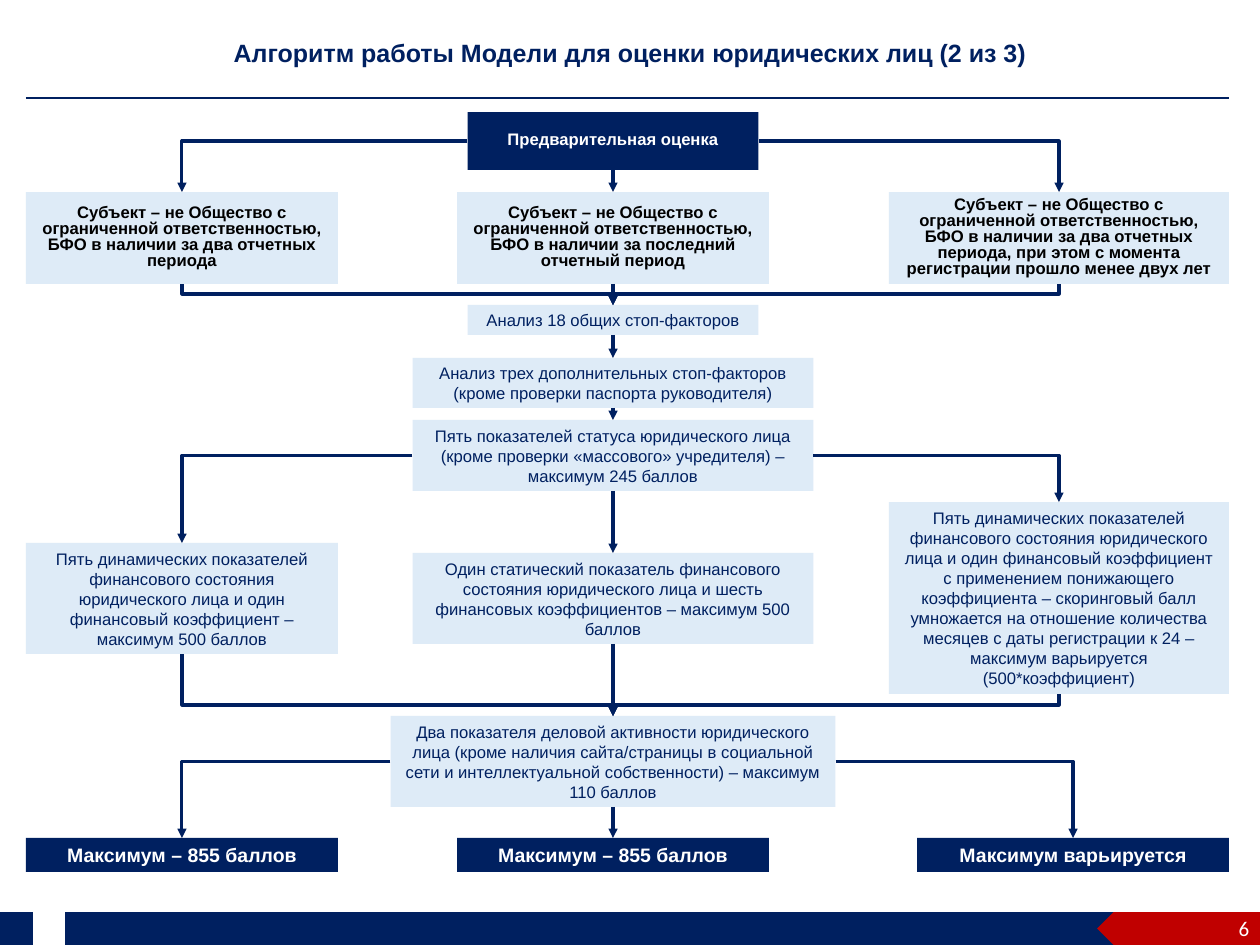
from pptx import Presentation
from pptx import util as u
from pptx.dml.color import RGBColor
from pptx.enum import shapes, text
from pptx.oxml import parse_xml
from pptx.oxml.ns import nsdecls
from lxml import etree

THEME = {
    "navy": "002060", "pale": "DEEBF7", "red": "C00000",
    "white": "FFFFFF", "black": "000000",
    "font": "Arial", "num_font": "Calibri",
    "title": 18, "body": 12, "score": 14, "num": 15.1,
    "flow": 2.25, "rule": 1.75,
}
TITLE = "Алгоритм работы Модели для оценки юридических лиц (2 из 3)"
PAGE = "6"

STYLES = {
    "start": ("navy", "white", "body", True, 0.8),
    "case": ("pale", "black", "body", True, 0.8),
    "step": ("pale", "navy", "body", False, None),
    "score": ("navy", "white", "score", True, None),
}
LEFT, MID, RIGHT, LAST = 1.82, 6.13, 10.59, 10.73

BOXES = {
    "start": ("start", MID, 1.12, 2.91, 0.58, "Предварительная оценка"),
    "case_l": ("case", LEFT, 1.92, 3.12, 0.92,
               "Субъект – не Общество с ограниченной ответственностью, "
               "БФО в наличии за два отчетных периода"),
    "case_m": ("case", MID, 1.92, 3.12, 0.92,
               "Субъект – не Общество с ограниченной ответственностью, "
               "БФО в наличии за последний отчетный период"),
    "case_r": ("case", RIGHT, 1.92, 3.4, 0.92,
               "Субъект – не Общество с ограниченной ответственностью, "
               "БФО в наличии за два отчетных периода, при этом с момента "
               "регистрации прошло менее двух лет"),
    "stops": ("step", MID, 3.05, 2.91, 0.3, "Анализ 18 общих стоп-факторов"),
    "extra": ("step", MID, 3.58, 4.01, 0.5,
              "Анализ трех дополнительных стоп-факторов "
              "(кроме проверки паспорта руководителя)"),
    "status": ("step", MID, 4.2, 4.01, 0.71,
               "Пять показателей статуса юридического лица (кроме проверки "
               "«массового» учредителя) – максимум 245 баллов"),
    "fin_l": ("step", LEFT, 5.43, 3.12, 1.11,
              "Пять динамических показателей финансового состояния "
              "юридического лица и один финансовый коэффициент – "
              "максимум 500 баллов"),
    "fin_m": ("step", MID, 5.53, 4.01, 0.91,
              "Один статический показатель финансового состояния "
              "юридического лица и шесть финансовых коэффициентов – "
              "максимум 500 баллов"),
    "fin_r": ("step", RIGHT, 5.02, 3.4, 1.92,
              "Пять динамических показателей финансового состояния "
              "юридического лица и один финансовый коэффициент с применением "
              "понижающего коэффициента – скоринговый балл умножается на "
              "отношение количества месяцев с даты регистрации к 24 – "
              "максимум варьируется (500*коэффициент)"),
    "trade": ("step", MID, 7.16, 4.45, 0.91,
              "Два показателя деловой активности юридического лица (кроме "
              "наличия сайта/страницы в социальной сети и интеллектуальной "
              "собственности) – максимум 110 баллов"),
    "max_l": ("score", LEFT, 8.38, 3.12, 0.34, "Максимум – 855 баллов"),
    "max_m": ("score", MID, 8.38, 3.12, 0.34, "Максимум – 855 баллов"),
    "max_r": ("score", LAST, 8.38, 3.12, 0.34, "Максимум варьируется"),
}
DOWN = [("start", "case_m"), ("case_m", "stops"), ("stops", "extra"),
        ("extra", "status"), ("status", "fin_m"), ("fin_m", "trade"),
        ("trade", "max_m")]
SPLIT = [("start", "case"), ("status", "fin"), ("trade", "max")]
JOIN = [("case", "stops"), ("fin", "trade")]
BUS = 0.11
TOP, WEST, BASE, EAST = range(4)

FOOTER = [
    ("RECTANGLE", 0, 0.33, "navy"),
    ("RECTANGLE", 0.65, 10.82, "navy"),
    ("PENTAGON", 10.97, 1.63, "red"),
]

deck = Presentation()
deck.slide_width, deck.slide_height = u.Inches(12.6), u.Inches(9.45)
slide = deck.slides.add_slide(deck.slide_layouts[6])
items = slide.shapes


def color(name):
    return RGBColor.from_string(THEME[name])


def write(shape, words, ink, size, bold=False, gap=None,
          align="CENTER", face="font", anchor="MIDDLE"):
    frame = shape.text_frame
    frame.word_wrap = True
    frame.vertical_anchor = text.MSO_ANCHOR[anchor]
    para = frame.paragraphs[0]
    para.text = words
    para.alignment = text.PP_ALIGN[align]
    if gap:
        para.line_spacing = gap
    font = para.font
    font.name, font.size, font.bold = THEME[face], u.Pt(THEME[size]), bold
    font.color.rgb = color(ink)


def block(kind, x, y, w, h, fill):
    shape = items.add_shape(shapes.MSO_SHAPE[kind], *map(u.Inches, (x, y, w, h)))
    shape.shadow.inherit = False
    shape.fill.solid()
    shape.fill.fore_color.rgb = color(fill)
    shape.line.fill.background()
    return shape


def label(x, y, w, h, *args, **opts):
    write(items.add_textbox(*map(u.Inches, (x, y, w, h))), *args, **opts)


def link(kind, ends, width="flow", arrow=True):
    line = items.add_connector(shapes.MSO_CONNECTOR[kind], *map(u.Inches, ends))
    line.line.color.rgb = color("navy")
    line.line.width = u.Pt(THEME[width])
    if arrow:
        line.line._get_or_add_ln().append(
            parse_xml(f'<a:tailEnd {nsdecls("a")} type="triangle"/>'))
    line._element.spPr.append(parse_xml(f'<a:effectLst {nsdecls("a")}/>'))
    return line


def glue(line, a, out, b):
    line.begin_connect(made[a], out)
    line.end_connect(made[b], TOP)


def spot(name, side):
    _, x, y, w, h, _ = BOXES[name]
    return {TOP: (x, y), WEST: (x - w / 2, y + h / 2),
            BASE: (x, y + h), EAST: (x + w / 2, y + h / 2)}[side]


def split(a, b, out):
    line = link("ELBOW", spot(a, out) + spot(b, TOP))
    line._element.spPr.prstGeom.set("prst", "bentConnector2")
    glue(line, a, out, b)


def join(a, b):
    (x1, y1), (x2, y2) = spot(a, BASE), spot(b, TOP)
    cx, cy, dx, dy = (x1 + x2) / 2, (y1 + y2) / 2, x2 - x1, y2 - y1
    ends = (cx - dy / 2, cy + dx / 2, cx + dy / 2, cy - dx / 2)
    line = link("ELBOW", ends)
    glue(line, a, BASE, b)
    line.begin_x, line.begin_y, line.end_x, line.end_y = map(u.Inches, ends)
    prop = line._element.spPr
    prop.xfrm.set("rot", "5400000")
    bend = round((dy - BUS) / dy * 100000)
    geom = prop.prstGeom
    for old in list(geom):
        geom.remove(old)
    etree.SubElement(
        geom.get_or_add_avLst(),
        "{http://schemas.openxmlformats.org/drawingml/2006/main}gd",
        name="adj1", fmla=f"val {bend}")


label(0, 0.38, 12.6, 0.34, TITLE, "navy", "title", True, 0.8, anchor="TOP")
link("STRAIGHT", (0.26, 0.98, 12.29, 0.98), "rule", False)

for kind, x, w, fill in FOOTER:
    block(kind, x, 9.12, w, 0.33, fill).rotation = 180
label(9.76, 9.03, 2.83, 0.5, PAGE, "white", "num", align="RIGHT", face="num_font")

made = {}
for name, (style, x, y, w, h, words) in BOXES.items():
    fill, *look = STYLES[style]
    made[name] = block("RECTANGLE", x - w / 2, y, w, h, fill)
    write(made[name], words, *look)

for a, b in DOWN:
    glue(link("STRAIGHT", spot(a, BASE) + spot(b, TOP)), a, BASE, b)
for a, row in SPLIT:
    split(a, row + "_l", WEST)
    split(a, row + "_r", EAST)
for row, b in JOIN:
    join(row + "_l", b)
    join(row + "_r", b)

deck.save("out.pptx")
